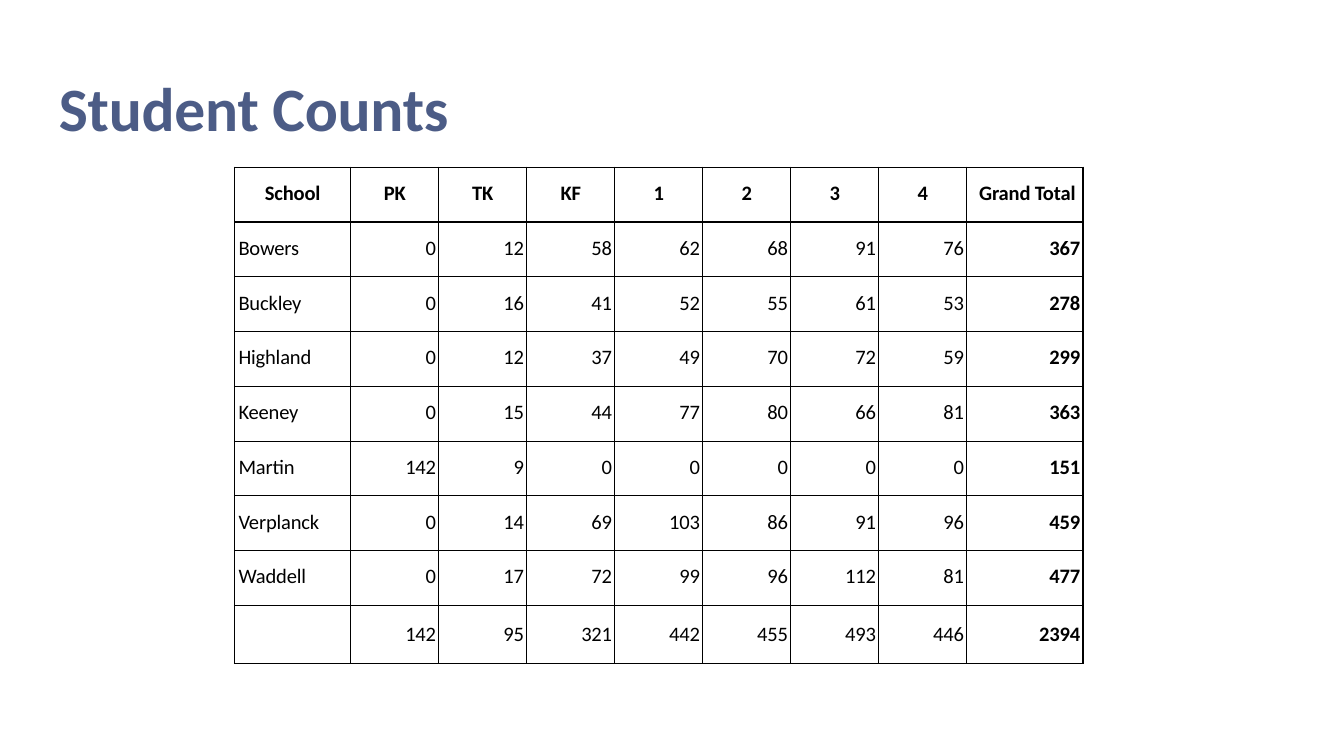
from dataclasses import dataclass

from lxml.etree import SubElement
from pptx import Presentation
from pptx.dml.color import RGBColor
from pptx.enum.text import MSO_ANCHOR, MSO_AUTO_SIZE, PP_ALIGN
from pptx.oxml.ns import qn
from pptx.util import Emu, Pt

PX = 2286  # 400 px to the inch
FONT = "Calibri"
NAVY = RGBColor(0x4C, 0x5C, 0x86)
BLACK = RGBColor(0x00, 0x00, 0x00)

TITLE_ONLY = 5
COLUMN_WIDTHS = [346] + [262] * 7 + [346]
ROW_HEIGHTS = [163] * 8 + [172]
GRADES = ["PK", "TK", "KF", "1", "2", "3", "4"]


@dataclass(frozen=True)
class School:
    name: str
    counts: tuple[int, ...]


@dataclass(frozen=True)
class CellStyle:
    align: PP_ALIGN
    bold: bool = False
    left: int = 0
    top: int = 40
    right: int = 0


SCHOOLS = [
    School("Bowers", (0, 12, 58, 62, 68, 91, 76)),
    School("Buckley", (0, 16, 41, 52, 55, 61, 53)),
    School("Highland", (0, 12, 37, 49, 70, 72, 59)),
    School("Keeney", (0, 15, 44, 77, 80, 66, 81)),
    School("Martin", (142, 9, 0, 0, 0, 0, 0)),
    School("Verplanck", (0, 14, 69, 103, 86, 91, 96)),
    School("Waddell", (0, 17, 72, 99, 96, 112, 81)),
]


def px(length: int) -> Emu:
    return Emu(length * PX)


def format_text(paragraph, size: int, color: RGBColor, bold: bool) -> None:
    paragraph.font.size = Pt(size)
    for span in paragraph.runs:
        span.font.name = FONT
        span.font.size = Pt(size)
        span.font.bold = bold
        span.font.color.rgb = color
        if len(span.text) > 1:
            span.font._element.set("spc", "-10")


def add_borders(cell) -> None:
    properties = cell._tc.get_or_add_tcPr()
    for side in ("lnL", "lnR", "lnT", "lnB"):
        line = SubElement(properties, qn(f"a:{side}"), w=str(Pt(0.75)))
        fill = SubElement(line, qn("a:solidFill"))
        SubElement(fill, qn("a:srgbClr"), val=str(BLACK))


def fill_cell(cell, text: str, style: CellStyle) -> None:
    cell.margin_left = px(style.left)
    cell.margin_top = px(style.top)
    cell.margin_right = px(style.right)
    cell.margin_bottom = 0
    cell.vertical_anchor = MSO_ANCHOR.TOP
    add_borders(cell)
    cell.fill.background()
    cell.text_frame.text = text
    paragraph = cell.text_frame.paragraphs[0]
    paragraph.alignment = style.align
    format_text(paragraph, 11, BLACK, style.bold)


def cell_style(row: int, column: int) -> CellStyle:
    last_column = column == len(GRADES) + 1
    if row == 0:
        if last_column:
            return CellStyle(PP_ALIGN.RIGHT, bold=True, right=22)
        return CellStyle(PP_ALIGN.CENTER, bold=True)
    top = 48 if row > len(SCHOOLS) else 40
    if column == 0:
        return CellStyle(PP_ALIGN.LEFT, left=12, top=top)
    return CellStyle(PP_ALIGN.RIGHT, bold=last_column, top=top, right=8)


def table_rows() -> list[list[str]]:
    """Header, one row per school with its sum, and the sums per grade."""
    rows = [["School", *GRADES, "Grand Total"]]
    totals = [sum(column) for column in zip(*(school.counts for school in SCHOOLS))]
    for school in [*SCHOOLS, School("", tuple(totals))]:
        rows.append([school.name, *map(str, school.counts), str(sum(school.counts))])
    return rows


def add_title(page) -> None:
    title = page.shapes.title
    title.left, title.top, title.width, title.height = map(px, (168, 200, 1180, 232))
    frame = title.text_frame
    frame.text = "Student Counts"
    frame.word_wrap = True
    frame.auto_size = MSO_AUTO_SIZE.SHAPE_TO_FIT_TEXT
    frame.vertical_anchor = MSO_ANCHOR.TOP
    frame.margin_left = frame.margin_top = px(7)
    frame.margin_right = frame.margin_bottom = 0
    frame.paragraphs[0].alignment = PP_ALIGN.LEFT
    format_text(frame.paragraphs[0], 33, NAVY, True)


def add_count_table(page) -> None:
    rows = table_rows()
    table = page.shapes.add_table(
        len(rows), len(COLUMN_WIDTHS), px(698), px(498),
        px(sum(COLUMN_WIDTHS)), px(sum(ROW_HEIGHTS)),
    ).table
    table.first_row = False
    table.horz_banding = False
    for column, width in zip(table.columns, COLUMN_WIDTHS):
        column.width = px(width)
    for row, height in zip(table.rows, ROW_HEIGHTS):
        row.height = px(height)
    for row, texts in enumerate(rows):
        for column, text in enumerate(texts):
            fill_cell(table.cell(row, column), text, cell_style(row, column))


def main() -> None:
    deck = Presentation()
    deck.slide_width, deck.slide_height = px(4000), px(2250)
    page = deck.slides.add_slide(deck.slide_layouts[TITLE_ONLY])
    add_title(page)
    add_count_table(page)
    deck.save("out.pptx")


if __name__ == "__main__":
    main()
